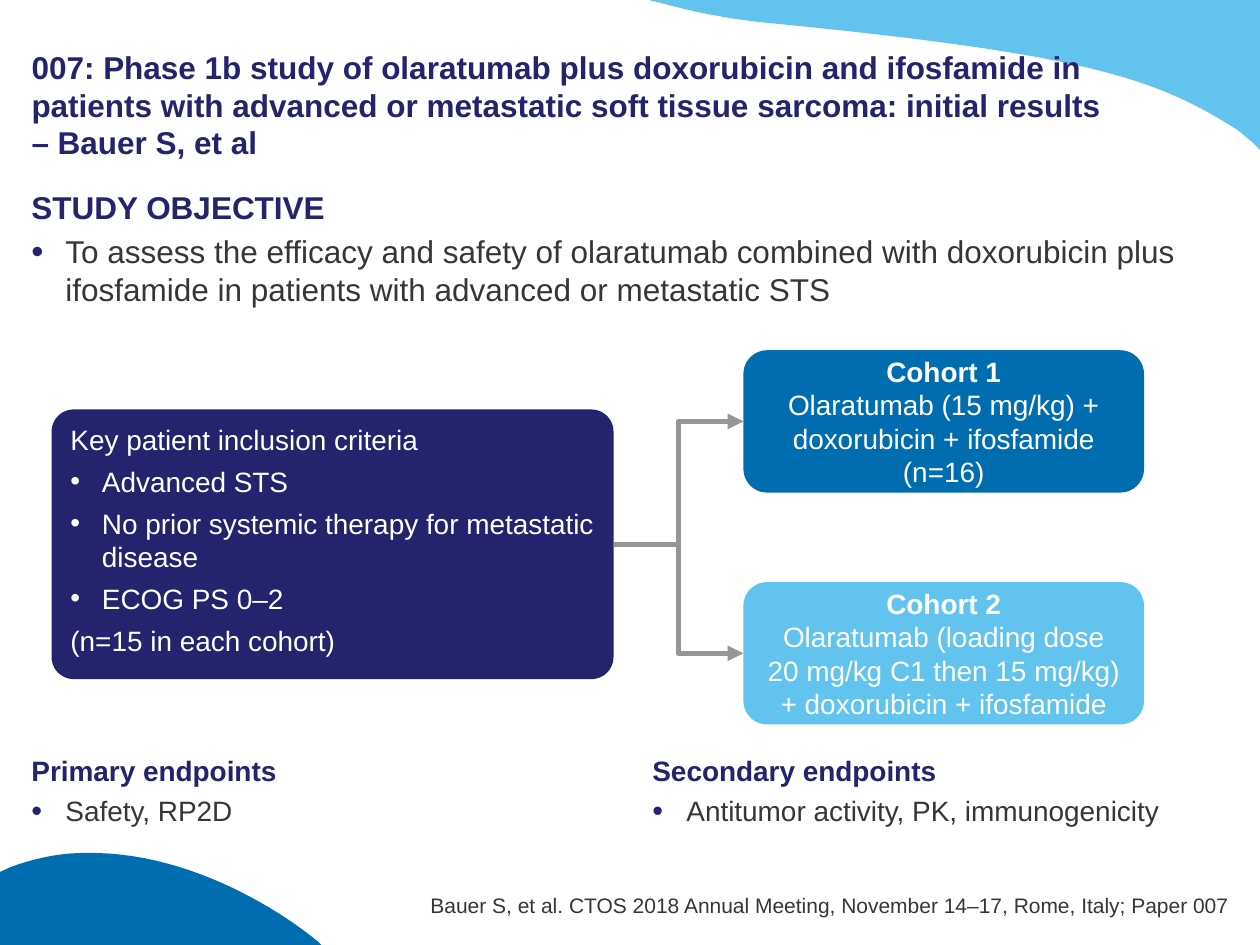
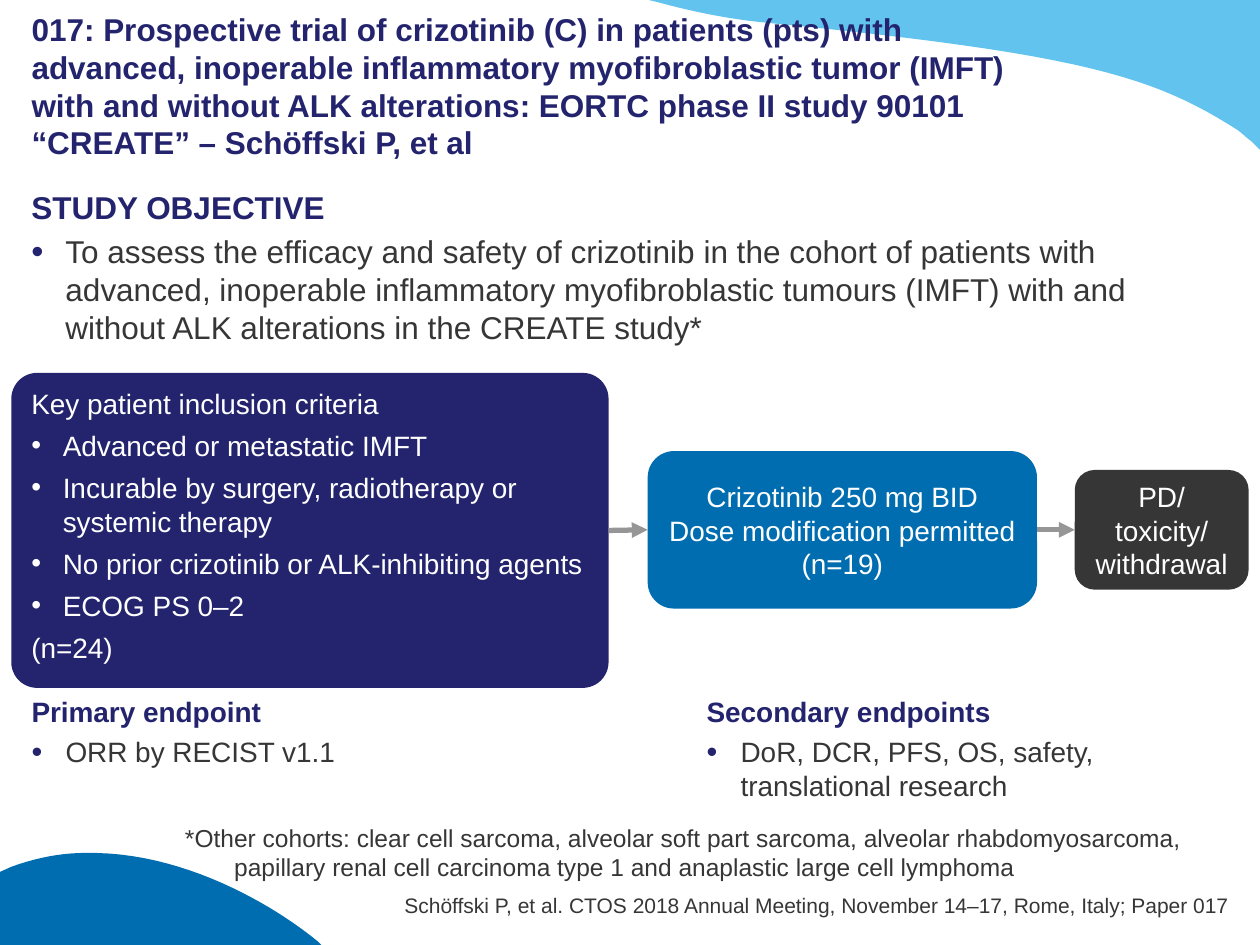
from dataclasses import dataclass

import pptx
import pptx.dml.color
import pptx.enum.shapes
import pptx.enum.text
import pptx.oxml
import pptx.oxml.ns
import pptx.util
from lxml import etree

Inches = pptx.util.Inches
RGBColor = pptx.dml.color.RGBColor
ALIGN = pptx.enum.text.PP_ALIGN
ANCHOR = pptx.enum.text.MSO_ANCHOR
CONNECTOR = pptx.enum.shapes.MSO_CONNECTOR
qn = pptx.oxml.ns.qn

NAVY = RGBColor(0x23, 0x24, 0x6D)
BLUE = RGBColor(0x00, 0x6D, 0xB0)
SKY = RGBColor(0x62, 0xC4, 0xEE)
CHARCOAL = RGBColor(0x36, 0x36, 0x36)
GREY = RGBColor(0x96, 0x96, 0x96)
WHITE = RGBColor(0xFF, 0xFF, 0xFF)
FONT = "Arial"
DEFAULT_INSETS = (0.1, 0.05, 0.1, 0.05)
FLUSH_INSETS = (0, 0.05, 0, 0.05)
TOP, LEFT, BOTTOM, RIGHT = range(4)

TOP_WAVE = [
    [(5.15, 0)], [(10, 0)], [(10, 1.19)], [(9.93, 1.12)],
    [(9.89, 1.09), (9.86, 1.06), (9.82, 1.03)],
    [(9.17, 0.62), (8.64, 0.43), (6.08, 0.18)],
    [(5.77, 0.15), (5.49, 0.09), (5.23, 0.02)],
]
BOTTOM_WAVE = [
    [(0.67, 6.77)],
    [(1.45, 6.75), (2.18, 7.19), (2.52, 7.47)],
    [(2.55, 7.5)], [(0, 7.5)], [(0, 6.92)], [(0.09, 6.88)],
    [(0.28, 6.81), (0.48, 6.77), (0.67, 6.77)],
]


@dataclass
class Line:
    text: str
    size: float = 16
    color: RGBColor = WHITE
    bold: bool = False
    align: ALIGN = ALIGN.LEFT
    space_after: float = 0
    margin: float = 0
    bullet: RGBColor = None
    bullet_percent: int = 100


def add_bullet(para, line):
    properties = para._p.get_or_add_pPr()
    properties.set("indent", str(-Inches(line.margin)))
    color = etree.SubElement(properties, qn("a:buClr"))
    etree.SubElement(color, qn("a:srgbClr"), val=str(line.bullet))
    etree.SubElement(properties, qn("a:buSzPct"), val=str(line.bullet_percent * 1000))
    etree.SubElement(properties, qn("a:buFont"), typeface=FONT)
    etree.SubElement(properties, qn("a:buChar"), char="•")


def write_lines(frame, lines, insets=DEFAULT_INSETS, anchor=ANCHOR.TOP):
    frame.word_wrap = True
    frame.auto_size = pptx.enum.text.MSO_AUTO_SIZE.NONE
    frame.vertical_anchor = anchor
    (frame.margin_left, frame.margin_top,
     frame.margin_right, frame.margin_bottom) = map(Inches, insets)
    for index, line in enumerate(lines):
        para = frame.add_paragraph() if index else frame.paragraphs[0]
        para.text = line.text
        if line.margin:
            para._p.get_or_add_pPr().set("marL", str(Inches(line.margin)))
        if line.bullet is not None:
            add_bullet(para, line)
        para.alignment = line.align
        para.space_before = pptx.util.Pt(0)
        para.space_after = pptx.util.Pt(line.space_after)
        para.font.name = FONT
        para.font.size = pptx.util.Pt(line.size)
        para.font.bold = line.bold
        para.font.color.rgb = line.color


def add_text(page, place, lines, insets=DEFAULT_INSETS, anchor=ANCHOR.TOP):
    box = page.shapes.add_textbox(*map(Inches, place))
    write_lines(box.text_frame, lines, insets, anchor)


def paint(shape, color):
    shape.shadow.inherit = False
    shape.fill.solid()
    shape.fill.fore_color.rgb = color
    shape.line.fill.background()


def curve_points(start, first, second, end, steps=24):
    for step in range(1, steps + 1):
        t = step / steps
        weights = ((1 - t) ** 3, 3 * t * (1 - t) ** 2, 3 * t * t * (1 - t), t ** 3)
        yield tuple(sum(w * point[axis] for w, point in
                        zip(weights, (start, first, second, end))) for axis in (0, 1))


def add_wave(page, layout, segments, color):
    points = list(segments[0])
    for segment in segments[1:]:
        points.extend(curve_points(points[-1], *segment) if len(segment) == 3 else segment)
    corners = [(Inches(x), Inches(y)) for x, y in points]
    builder = page.shapes.build_freeform(*corners[0], scale=1.0)
    builder.add_line_segments(corners[1:], close=True)
    wave = builder.convert_to_shape()
    paint(wave, color)
    layout.shapes.element.append(wave.element)


def add_page(deck, layout, title, title_width, objective, source):
    page = deck.slides.add_slide(layout)
    heading = page.shapes.title
    heading.left, heading.top, heading.width, heading.height = map(
        Inches, (0.25, 0.25, title_width, 1.03))
    write_lines(heading.text_frame, [Line(title, 18, NAVY, True)],
                (0, 0.05, 0, 0), ANCHOR.BOTTOM)
    add_section(page, (0.25, 1.44, 9.5, 1.5), "STUDY OBJECTIVE", objective,
                FLUSH_INSETS, 18)
    citation = f"{source} CTOS 2018 Annual Meeting, November 14–17, Rome, Italy; Paper {title[:3]}"
    add_text(page, (2.76, 7.08, 7, 0.2),
             [Line(citation, 12, CHARCOAL, align=ALIGN.RIGHT)], (0, 0, 0, 0), ANCHOR.BOTTOM)
    return page


def add_section(page, place, heading, point, insets=DEFAULT_INSETS, size=16):
    add_text(page, place, [
        Line(heading, size, NAVY, True, space_after=4),
        Line(point, size, CHARCOAL, space_after=4, margin=0.27,
             bullet=NAVY, bullet_percent=110),
    ], insets)


def add_card(page, place, color, corner=0.167):
    card = page.shapes.add_shape(
        pptx.enum.shapes.MSO_SHAPE.ROUNDED_RECTANGLE, *map(Inches, place))
    card.adjustments[0] = corner
    paint(card, color)
    return card


def add_criteria(page, place, criteria, count):
    card = add_card(page, place, NAVY, 0.082)
    lines = [Line("Key patient inclusion criteria", space_after=4.8)]
    lines += [Line(text, space_after=4.8, margin=0.25, bullet=WHITE) for text in criteria]
    lines.append(Line(count, space_after=4.8))
    write_lines(card.text_frame, lines)
    return card


def add_treatment(page, place, color, text, heading=None):
    card = add_card(page, place, color)
    lines = [Line(heading, bold=True, align=ALIGN.CENTER)] if heading else []
    lines.append(Line(text, align=ALIGN.CENTER))
    write_lines(card.text_frame, lines, (0.1, 0, 0.1, 0), ANCHOR.MIDDLE)
    return card


def add_arrow(page, source, target, kind):
    arrow = page.shapes.add_connector(
        kind, source.left + source.width, source.top + source.height // 2,
        target.left, target.top + target.height // 2)
    arrow.begin_connect(source, RIGHT)
    arrow.end_connect(target, LEFT)
    arrow.line.color.rgb = GREY
    arrow.line.width = pptx.util.Pt(3)
    etree.SubElement(arrow.line._get_or_add_ln(), qn("a:tailEnd"), type="triangle")
    etree.SubElement(arrow.element.spPr, qn("a:effectLst"))


def build_olaratumab(deck, layout):
    page = add_page(
        deck, layout,
        "007: Phase 1b study of olaratumab plus doxorubicin and ifosfamide in patients with "
        "advanced or metastatic soft tissue sarcoma: initial results – Bauer S, et al", 8.62,
        "To assess the efficacy and safety of olaratumab combined with doxorubicin plus "
        "ifosfamide in patients with advanced or metastatic STS", "Bauer S, et al.")
    criteria = add_criteria(
        page, (0.41, 3.25, 4.46, 2.14),
        ["Advanced STS", "No prior systemic therapy for metastatic disease", "ECOG PS 0–2"],
        "(n=15 in each cohort)")
    cohorts = [
        (2.78, BLUE, "Cohort 1", "Olaratumab (15 mg/kg) + doxorubicin + ifosfamide\n(n=16)"),
        (4.62, SKY, "Cohort 2",
         "Olaratumab (loading dose\n20 mg/kg C1 then 15 mg/kg) + doxorubicin + ifosfamide"),
    ]
    for top, color, heading, regimen in cohorts:
        cohort = add_treatment(page, (5.9, top, 3.18, 1.13), color, regimen, heading)
        add_arrow(page, criteria, cohort, CONNECTOR.ELBOW)
    add_section(page, (0.25, 5.93, 4.67, 0.78), "Primary endpoints", "Safety, RP2D",
                FLUSH_INSETS)
    add_section(page, (5.08, 5.93, 4.67, 0.92), "Secondary endpoints",
                "Antitumor activity, PK, immunogenicity")
    return page


def build_crizotinib(deck, layout):
    page = add_page(
        deck, layout,
        "017: Prospective trial of crizotinib (C) in patients (pts) with advanced, inoperable "
        "inflammatory myofibroblastic tumor (IMFT) with and without ALK alterations: "
        "EORTC phase II study 90101 “CREATE” – Schöffski P, et al", 7.87,
        "To assess the efficacy and safety of crizotinib in the cohort of patients with "
        "advanced, inoperable inflammatory myofibroblastic tumours (IMFT) with and without "
        "ALK alterations in the CREATE study*", "Schöffski P, et al.")
    add_section(page, (0.25, 5.46, 4.95, 0.77), "Primary endpoint", "ORR by RECIST v1.1",
                FLUSH_INSETS)
    add_section(page, (5.51, 5.46, 4.04, 0.92), "Secondary endpoints",
                "DoR, DCR, PFS, OS, safety, translational research")
    criteria = add_criteria(
        page, (0.09, 2.96, 4.74, 2.5),
        ["Advanced or metastatic IMFT", "Incurable by surgery, radiotherapy or systemic therapy",
         "No prior crizotinib or ALK-inhibiting agents", "ECOG PS 0–2"], "(n=24)")
    treatment = add_treatment(
        page, (5.14, 3.58, 3.09, 1.25), BLUE,
        "Crizotinib 250 mg BID\nDose modification permitted\n(n=19)")
    outcome = add_treatment(page, (8.53, 3.73, 1.38, 0.95), CHARCOAL,
                            "PD/\ntoxicity/\nwithdrawal")
    add_arrow(page, criteria, treatment, CONNECTOR.STRAIGHT)
    add_arrow(page, treatment, outcome, CONNECTOR.STRAIGHT)
    add_text(page, (1.37, 6.48, 8.63, 0.57), [
        Line("*Other cohorts: clear cell sarcoma, alveolar soft part sarcoma, "
             "alveolar rhabdomyosarcoma,", 14, CHARCOAL),
        Line("papillary renal cell carcinoma type 1 and anaplastic large cell lymphoma",
             14, CHARCOAL, margin=0.39),
    ])


def main():
    deck = pptx.Presentation()
    deck.slide_width, deck.slide_height = Inches(10), Inches(7.5)
    layout = deck.slide_layouts[5]
    page = build_olaratumab(deck, layout)
    add_wave(page, layout, TOP_WAVE, SKY)
    add_wave(page, layout, BOTTOM_WAVE, BLUE)
    build_crizotinib(deck, layout)
    deck.save("out.pptx")


if __name__ == "__main__":
    main()
